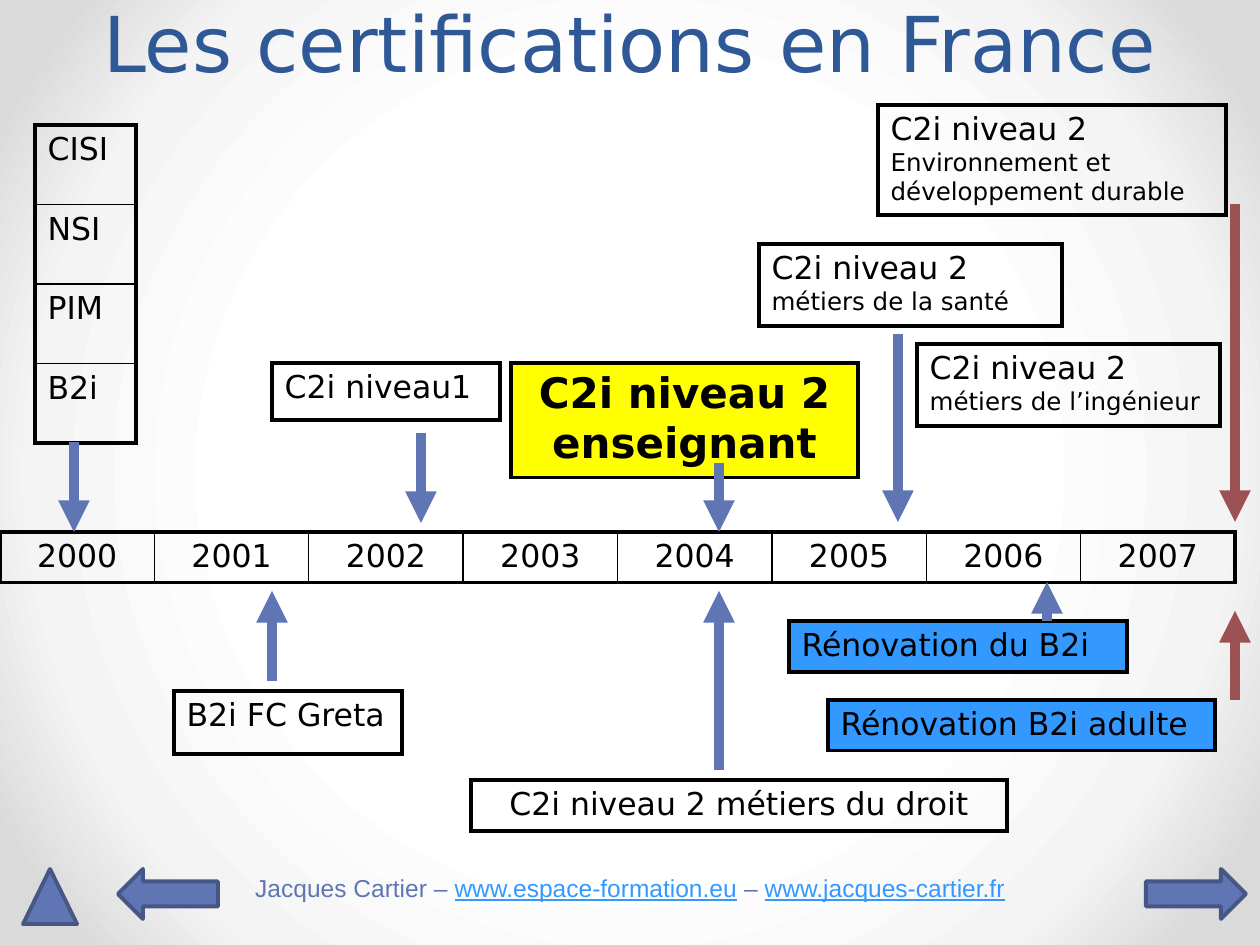
from pptx import Presentation
from pptx.dml.color import RGBColor
from pptx.enum.shapes import MSO_CONNECTOR as CONN, MSO_SHAPE as SHAPE
from pptx.enum.text import MSO_ANCHOR as ANCHOR, PP_ALIGN as ALIGN
from pptx.oxml import parse_xml
from pptx.oxml.ns import nsdecls
from pptx.util import Emu, Pt

COLORS = {
    "text": "000000", "title": "2F5897", "blue": "6076B4", "edge": "475785",
    "red": "9C5252", "link": "3399FF", "yellow": "FFFF00",
}
BACKGROUND = [(50, "FFFFFF"), (76, "F4F4F4"), (92, "DADADA")]
SANS, ARIAL = "DejaVu Sans", "Arial"
THICK, THIN = 2.25, 1


def px(n):
    return Emu(round(n * 914400 / 126))


def rgb(name):
    return RGBColor.from_string(COLORS[name])


class Deck:
    def __init__(self, width, height):
        self.prs = Presentation()
        self.prs.slide_width, self.prs.slide_height = px(width), px(height)
        self.s = None

    def slide(self):
        self.s = self.prs.slides.add_slide(self.prs.slide_layouts[6])
        stops = "".join(f'<a:gs pos="{pos * 1000}"><a:srgbClr val="{color}"/></a:gs>'
                        for pos, color in BACKGROUND)
        self.s._element.cSld.insert(0, parse_xml(
            f'<p:bg {nsdecls("p", "a")}><p:bgPr><a:gradFill rotWithShape="1">'
            f'<a:gsLst>{stops}</a:gsLst><a:path path="circle">'
            '<a:fillToRect l="50000" t="50000" r="50000" b="50000"/></a:path>'
            '</a:gradFill><a:effectLst/></p:bgPr></p:bg>'))

    def font(self, p, name, size, color, bold=False):
        p.font.name, p.font.size, p.font.bold = name, Pt(size), bold
        p.font.color.rgb = rgb(color)

    def text(self, x, y, w, h, name, size, color, spacing, runs, anchor=ANCHOR.TOP):
        tf = self.s.shapes.add_textbox(px(x), px(y), px(w), px(h)).text_frame
        tf.word_wrap, tf.vertical_anchor = True, anchor
        p = tf.paragraphs[0]
        p.alignment, p.line_spacing = ALIGN.CENTER, spacing
        self.font(p, name, size, color)
        for content, is_link in runs:
            r = p.add_run()
            r.text = content
            if is_link:
                r.font.underline = True
                r.font.color.rgb = rgb("link")

    def shape(self, kind, x, y, w, h):
        sp = self.s.shapes.add_shape(kind, px(x), px(y), px(w), px(h))
        sp.shadow.inherit = False
        sp.fill.solid()
        sp.fill.fore_color.rgb = rgb("blue")
        sp.line.color.rgb = rgb("edge")
        sp.line.width = Pt(2.25)

    def borders(self, cell, left, right, top, bottom):
        tc_pr = cell._tc.get_or_add_tcPr()
        for i, (side, width) in enumerate(zip("LRTB", (left, right, top, bottom))):
            tc_pr.insert(i, parse_xml(
                f'<a:ln{side} {nsdecls("a")} w="{Pt(width)}"><a:solidFill>'
                f'<a:srgbClr val="{COLORS["text"]}"/></a:solidFill></a:ln{side}>'))

    def table(self, x, y, w, h, rows, align=ALIGN.JUSTIFY, fill=None, size=18, bold=False):
        n_rows, n_cols = len(rows), len(rows[0])
        table = self.s.shapes.add_table(n_rows, n_cols, px(x), px(y), px(w), px(h)).table
        table.first_row = table.horz_banding = False
        for i, row in enumerate(rows):
            for j, content in enumerate(row):
                cell = table.cell(i, j)
                if fill:
                    cell.fill.solid()
                    cell.fill.fore_color.rgb = rgb(fill)
                else:
                    cell.fill.background()
                self.borders(cell,
                             THICK if j == 0 else THIN,
                             THICK if j == n_cols - 1 else THIN,
                             THICK if i == 0 else THIN,
                             THICK if i == n_rows - 1 else THIN)
                p = cell.text_frame.paragraphs[0]
                p.alignment, p.line_spacing = align, 1.01
                p.space_before, p.space_after = Pt(3), Pt(6)
                self.font(p, SANS, size, "text", bold)
                p.add_run().text = content
        return table

    def level_two(self, x, y, w, h, field):
        table = self.table(x, y, w, h, [["C2i niveau 2"]], ALIGN.LEFT)
        p = table.cell(0, 0).text_frame.paragraphs[0]
        p.add_line_break()
        r = p.add_run()
        r.text, r.font.size = field, Pt(14)

    def arrow(self, x, start, end, color="blue"):
        c = self.s.shapes.add_connector(CONN.STRAIGHT, px(x), px(start), px(x), px(end))
        c.line.color.rgb = rgb(color)
        c.line.width = Pt(6)
        c.line._get_or_add_ln().append(parse_xml(f'<a:tailEnd {nsdecls("a")} type="triangle"/>'))
        c._element.spPr.append(parse_xml(f'<a:effectLst {nsdecls("a")}/>'))


def main():
    deck = Deck(1260, 945)
    deck.slide()

    deck.text(218, 869, 824, 40, ARIAL, 14, "blue", 0.93, [
        ("Jacques Cartier – ", False), ("www.espace-formation.eu", True),
        (" – ", False), ("www.jacques-cartier.fr", True)])
    deck.shape(SHAPE.RIGHT_ARROW, 1146, 869, 100, 50)
    deck.shape(SHAPE.LEFT_ARROW, 118, 869, 100, 50)
    deck.shape(SHAPE.ISOSCELES_TRIANGLE, 23, 869, 54, 55)
    deck.text(32, 21, 1197, 73, SANS, 44, "title", Pt(58),
              [("Les certifications en France", False)], ANCHOR.BOTTOM)

    deck.table(35, 125, 101, 318, [["CISI"], ["NSI"], ["PIM"], ["B2i"]])
    deck.table(272, 363, 228, 57, [["C2i niveau1"]])
    deck.table(174, 691, 228, 63, [["B2i FC Greta"]])
    deck.table(511, 363, 347, 111, [["C2i niveau 2 enseignant"]],
               ALIGN.CENTER, "yellow", 24, True)
    deck.table(471, 780, 536, 50, [["C2i niveau 2 métiers du droit"]], ALIGN.CENTER)
    deck.table(789, 621, 338, 50, [["Rénovation du B2i"]], fill="link")
    deck.table(828, 700, 387, 50, [["Rénovation B2i adulte"]], fill="link")
    deck.level_two(759, 244, 303, 82, "métiers de la santé")
    deck.level_two(878, 105, 348, 108, "Environnement et développement durable")
    deck.level_two(917, 344, 303, 82, "métiers de l’ingénieur")
    deck.table(0, 532, 1235, 50, [[str(year) for year in range(2000, 2008)]], ALIGN.CENTER)

    for x, start, end in [(74, 442, 532), (421, 433, 523), (272, 681, 591), (719, 770, 591),
                          (1047, 621, 582), (898, 334, 522), (719, 463, 532)]:
        deck.arrow(x, start, end)
    for start, end in [(700, 611), (204, 522)]:
        deck.arrow(1235, start, end, "red")

    deck.prs.save("out.pptx")


if __name__ == "__main__":
    main()
